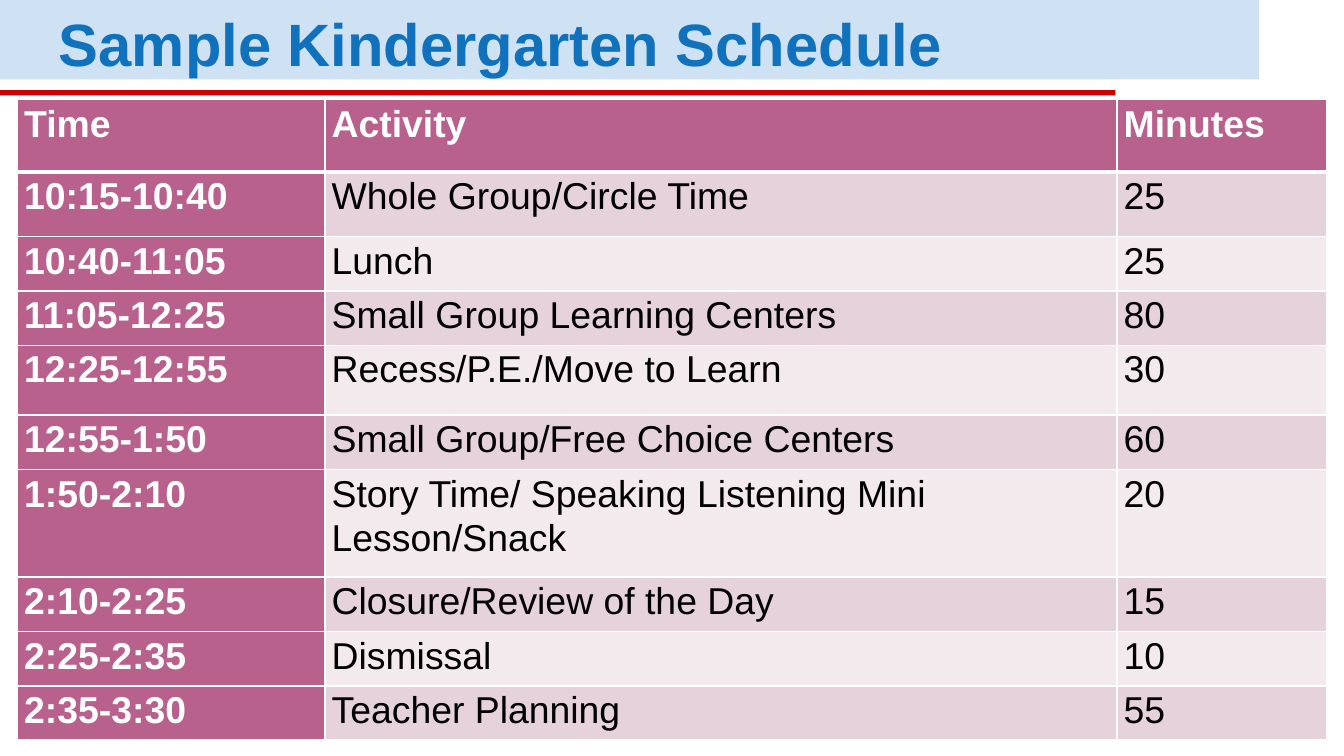
from dataclasses import dataclass

from lxml import etree
from pptx import Presentation
from pptx.dml.color import RGBColor
from pptx.enum.shapes import MSO_SHAPE
from pptx.enum.text import MSO_ANCHOR
from pptx.oxml.ns import qn
from pptx.util import Inches, Pt

RECTANGLE = MSO_SHAPE.RECTANGLE
MIDDLE = MSO_ANCHOR.MIDDLE


@dataclass(frozen=True)
class Theme:
    font: str = "Arial"
    title_size: int = 32
    table_size: int = 20
    title: str = "1071BD"
    banner: str = "CFE2F3"
    rule: str = "CC0000"
    head: str = "B7618C"
    bands: tuple = ("E6D2DA", "F3EAEE")
    light: str = "FFFFFF"
    dark: str = "000000"


THEME = Theme()

HEADINGS = ("Time", "Activity", "Minutes")
SCHEDULE = (
    ("10:15-10:40", "Whole Group/Circle Time", "25"),
    ("10:40-11:05", "Lunch", "25"),
    ("11:05-12:25", "Small Group Learning Centers", "80"),
    ("12:25-12:55", "Recess/P.E./Move to Learn", "30"),
    ("12:55-1:50", "Small Group/Free Choice Centers", "60"),
    ("1:50-2:10", "Story Time/ Speaking Listening Mini Lesson/Snack", "20"),
    ("2:10-2:25", "Closure/Review of the Day", "15"),
    ("2:25-2:35", "Dismissal", "10"),
    ("2:35-3:30", "Teacher Planning", "55"),
)
COLUMN_WIDTHS = (2.29, 5.9, 1.56)
TALL_ROWS = {0: 0.54, 1: 0.48, 4: 0.52, 6: 0.8}


def style_paragraph(p, size, color, bold, spacing):
    p.line_spacing = spacing
    p.font.name = THEME.font
    p.font.size = Pt(size)
    p.font.bold = bold
    p.font.color.rgb = RGBColor.from_string(color)


def add_bar(slide, left, top, width, height, color):
    sp = slide.shapes.add_shape(
        RECTANGLE, Inches(left), Inches(top), Inches(width), Inches(height))
    sp.shadow.inherit = False
    sp.fill.solid()
    sp.fill.fore_color.rgb = RGBColor.from_string(color)
    sp.line.fill.background()


def add_header(slide, left, top, width, title):
    """Banner with the title, and the rule below it."""
    add_bar(slide, left, top, width, 0.59, THEME.banner)
    add_bar(slide, left, top + 0.67, width - 1.07, 0.04, THEME.rule)
    box = slide.shapes.add_textbox(
        Inches(left + 0.34), Inches(top + 0.03), Inches(width - 0.34), Inches(0.49))
    tf = box.text_frame
    tf.word_wrap = True
    tf.vertical_anchor = MIDDLE
    tf.margin_left = tf.margin_right = tf.margin_top = tf.margin_bottom = Inches(0.1)
    p = tf.paragraphs[0]
    p.text = title
    p.space_after = Pt(16)
    style_paragraph(p, THEME.title_size, THEME.title, True, 1.15)


def set_borders(cell, top, bottom):
    """White lines: 1 pt at the sides, the given widths above and below."""
    props = cell._tc.get_or_add_tcPr()
    edges = (("a:lnL", 1), ("a:lnR", 1), ("a:lnT", top), ("a:lnB", bottom))
    for i, (tag, width) in enumerate(edges):
        ln = etree.Element(qn(tag), w=str(Pt(width)))
        fill = etree.SubElement(ln, qn("a:solidFill"))
        etree.SubElement(fill, qn("a:srgbClr"), val=THEME.light)
        props.insert(i, ln)


def fill_cell(cell, text, row, column):
    is_head = row == 0 or column == 0
    cell.margin_left = cell.margin_right = Inches(0.05)
    cell.margin_top, cell.margin_bottom = Inches(0.01), 0
    cell.fill.solid()
    cell.fill.fore_color.rgb = RGBColor.from_string(
        THEME.head if is_head else THEME.bands[(row - 1) % 2])
    set_borders(cell, 3 if row == 1 else 1, 3 if row == 0 else 1)
    p = cell.text_frame.paragraphs[0]
    p.text = text
    style_paragraph(p, THEME.table_size, THEME.light if is_head else THEME.dark,
                    is_head, 1.06)


def add_schedule(slide, left, top, width, height):
    """Table whose ordinary rows share the height the tall rows leave."""
    rows = (HEADINGS, *SCHEDULE)
    row_height = (height - sum(TALL_ROWS.values())) / (len(rows) - len(TALL_ROWS))
    table = slide.shapes.add_table(
        len(rows), len(HEADINGS),
        Inches(left), Inches(top), Inches(width), Inches(height)).table
    for column, share in zip(table.columns, COLUMN_WIDTHS):
        column.width = Inches(width * share / sum(COLUMN_WIDTHS))
    for r, texts in enumerate(rows):
        table.rows[r].height = Inches(TALL_ROWS.get(r, row_height))
        for c, text in enumerate(texts):
            fill_cell(table.cell(r, c), text, r, c)


def main():
    prs = Presentation()
    prs.slide_width = Inches(10)
    prs.slide_height = prs.slide_width * 9 // 16
    slide = prs.slides.add_slide(prs.slide_layouts[6])
    add_header(slide, 0, 0, 9.37, "Sample Kindergarten Schedule")
    add_schedule(slide, 0.13, 0.74, 9.74, 4.77)
    prs.save("out.pptx")


if __name__ == "__main__":
    main()
